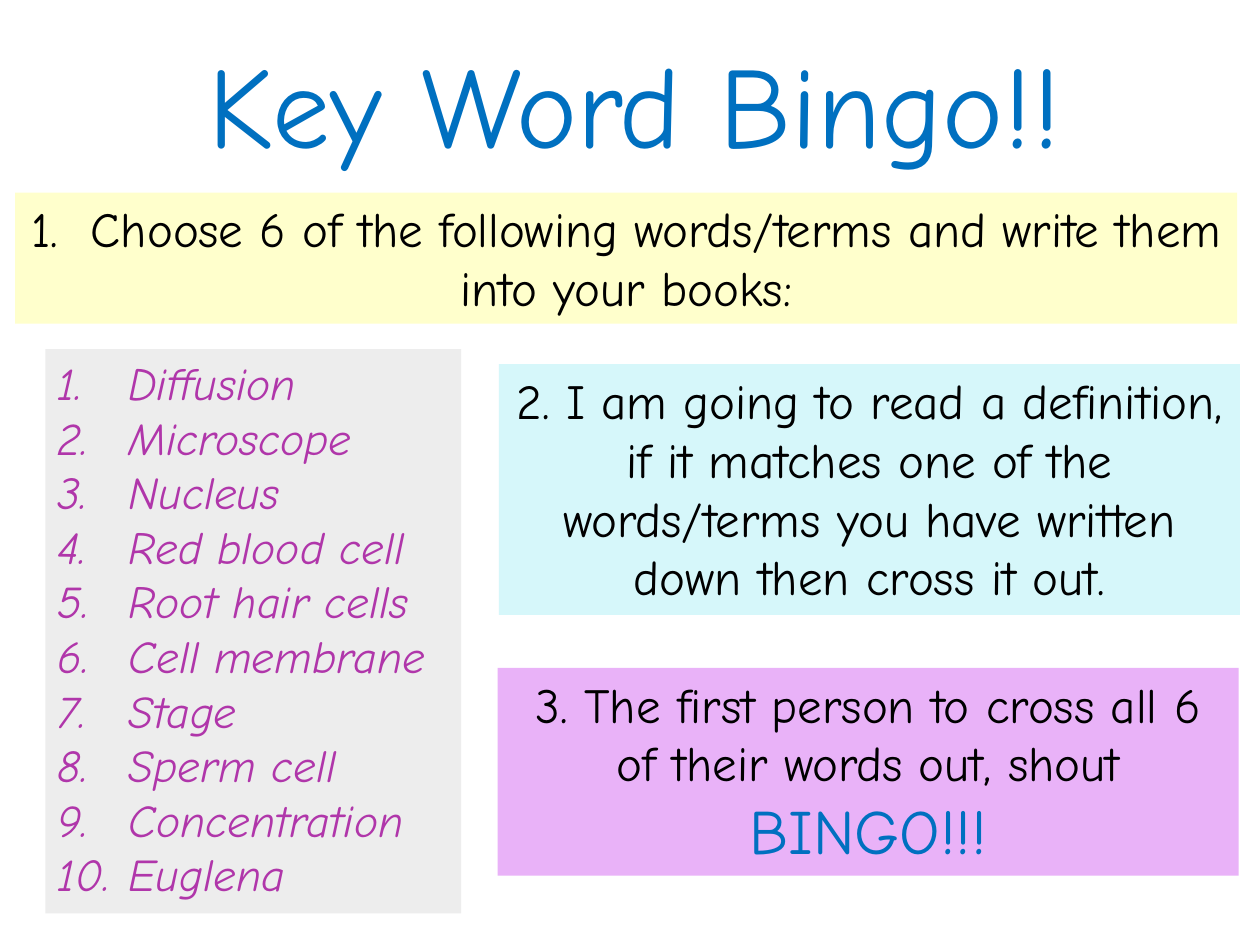
from dataclasses import dataclass

from lxml import etree
from pptx import Presentation
from pptx.dml.color import RGBColor
from pptx.enum.shapes import MSO_SHAPE
from pptx.enum.text import MSO_ANCHOR, MSO_AUTO_SIZE, PP_ALIGN
from pptx.oxml.ns import qn
from pptx.util import Inches, Pt

RECT = MSO_SHAPE.RECTANGLE
TOP = MSO_ANCHOR.TOP
FIXED = MSO_AUTO_SIZE.NONE
LEFT, CENTER = PP_ALIGN.LEFT, PP_ALIGN.CENTER


@dataclass(frozen=True)
class Theme:
    font: str = "Comic Neue"
    ink: str = "000000"
    blue: str = "0070C0"
    plum: str = "B036AA"
    cream: str = "FFFFCC"
    gray: str = "EDEDED"
    aqua: str = "D6F7FA"
    pink: str = "E9B2F8"
    title: int = 66
    shout: int = 36
    body: int = 28
    term: int = 26


theme = Theme()
deck = Presentation()
deck.slide_width, deck.slide_height = Inches(10), Inches(7.5)
cell = deck.slide_width / 100  # square grid: 100 columns by 75 rows
slide = deck.slides.add_slide(deck.slide_layouts[5])


def place(shape, left, top, width, height):
    """Set a shape on the grid and prepare its text frame."""
    shape.left, shape.top, shape.width, shape.height = (
        round(n * cell) for n in (left, top, width, height))
    frame = shape.text_frame
    frame.word_wrap = True
    frame.auto_size = FIXED
    frame.vertical_anchor = TOP
    return frame


def write(para, text, size=theme.body, color=theme.ink, italic=False, align=CENTER):
    para.alignment = align
    run = para.add_run()
    run.text = text
    run.font.name = theme.font
    run.font.size = Pt(size)
    run.font.italic = italic
    run.font.color.rgb = RGBColor.from_string(color)


head = place(slide.shapes.title, 4.3, 2.1, 92.1, 12.1)
write(head.paragraphs[0], "Key Word Bingo!!", size=theme.title, color=theme.blue)

panels = {
    "choose": (theme.cream, 1.2, 15.3, 97, 10.4),
    "terms": (theme.gray, 3.6, 27.7, 33, 44.8),
    "listen": (theme.aqua, 39.6, 28.9, 58.8, 19.9),
    "win": (theme.pink, 39.5, 53, 58.8, 16.5),
}
frames = {}
for name, (fill, *area) in panels.items():
    box = slide.shapes.add_shape(RECT, 0, 0, 0, 0)
    box.shadow.inherit = False
    box.fill.solid()
    box.fill.fore_color.rgb = RGBColor.from_string(fill)
    box.line.fill.background()
    frames[name] = place(box, *area)

write(frames["choose"].paragraphs[0],
      "1.  Choose 6 of the following words/terms and write them into your books:")
write(frames["listen"].paragraphs[0],
      "2. I am going to read a definition, if it matches one of the "
      "words/terms you have written down then cross it out.")
win = frames["win"].paragraphs[0]
write(win, "3. The first person to cross all 6 of their words out, shout ")
write(win, "BINGO!!!", size=theme.shout, color=theme.blue)

terms = ["Diffusion", "Microscope", "Nucleus", "Red blood cell", "Root hair cells",
         "Cell membrane", "Stage", "Sperm cell", "Concentration", "Euglena"]
indent = round(5.6 * cell)
for i, term in enumerate(terms):
    frame = frames["terms"]
    para = frame.add_paragraph() if i else frame.paragraphs[0]
    write(para, term, size=theme.term, color=theme.plum, italic=True, align=LEFT)
    props = para._p.get_or_add_pPr()
    props.set("marL", str(indent))
    props.set("indent", str(-indent))
    etree.SubElement(props, qn("a:buFont"), typeface="+mj-lt")
    etree.SubElement(props, qn("a:buAutoNum"), type="arabicPeriod")

deck.save("out.pptx")
